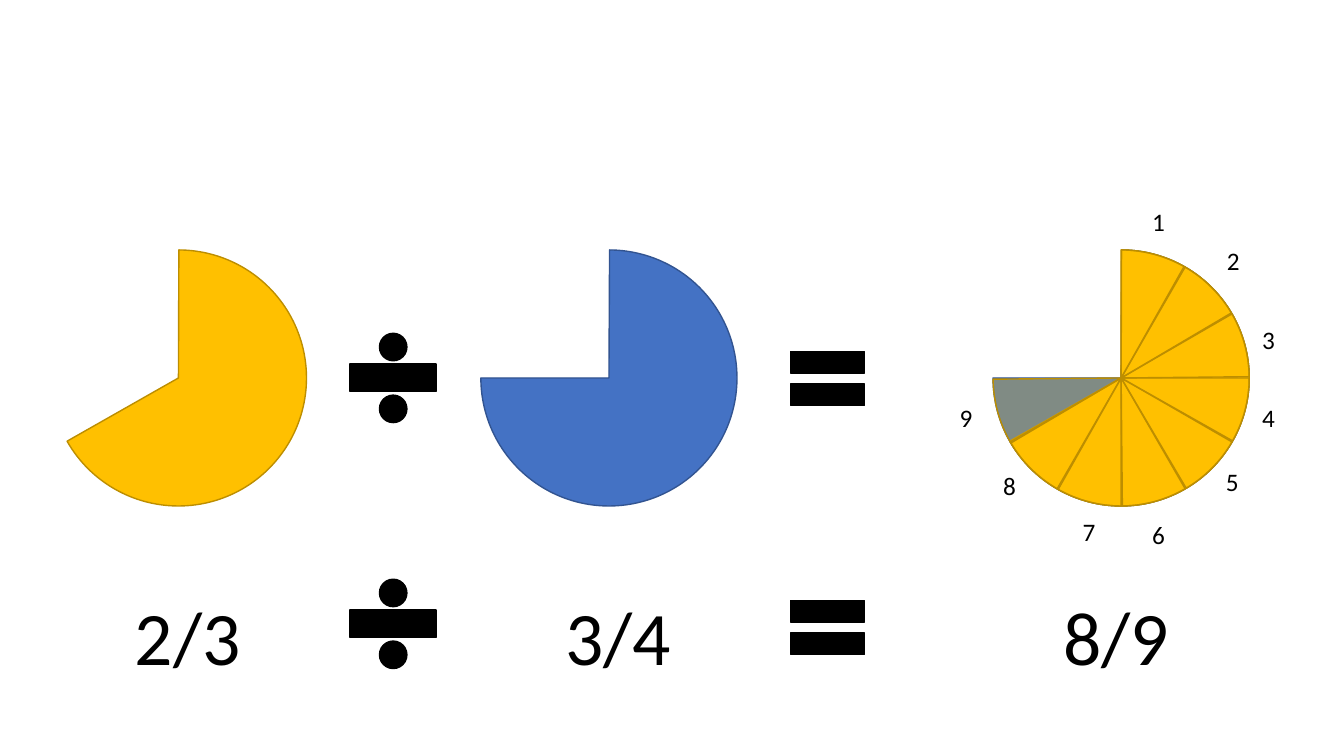
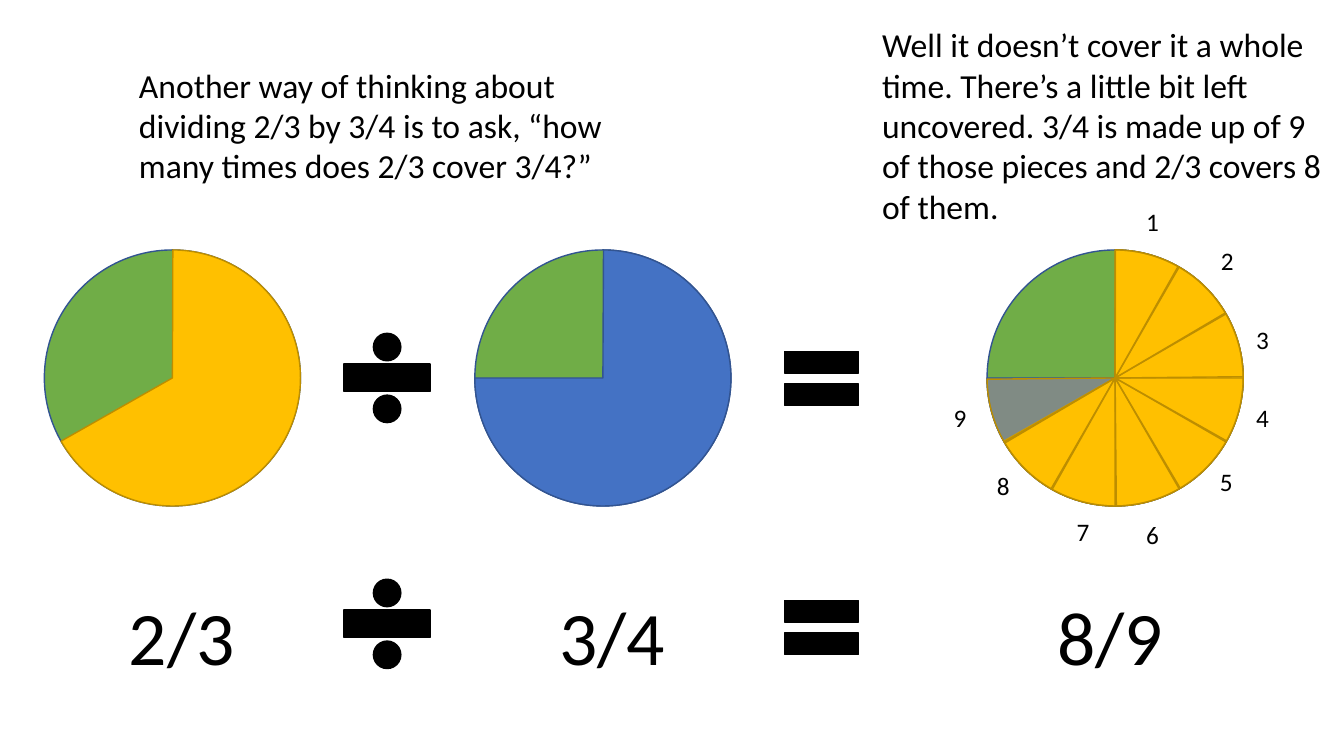
from lxml.etree import SubElement
from pptx import Presentation
from pptx.dml.color import RGBColor
from pptx.enum.shapes import MSO_SHAPE as Kind
from pptx.enum.text import MSO_AUTO_SIZE as Fit
from pptx.oxml.ns import qn
from pptx.util import Inches, Pt

BLACK = RGBColor(0x00, 0x00, 0x00)
BLUE = RGBColor(0x44, 0x72, 0xC4)
NAVY = RGBColor(0x32, 0x54, 0x91)
GOLD = RGBColor(0xFF, 0xC0, 0x00)
OCHRE = RGBColor(0xBD, 0x8E, 0x00)
GREEN = RGBColor(0x70, 0xAD, 0x47)

FONT = "Calibri"
SIZE = 2.54
TOP = 2.48
FIRST, SECOND, THIRD = 0.5, 4.77, 9.85
STEP = 30
LABELS = [(11.33, 2), (12.07, 2.38), (12.42, 3.17), (12.42, 3.94), (12.06, 4.58),
          (11.33, 5.1), (10.64, 5.07), (9.85, 4.62), (9.42, 3.94)]
ASK = ("Another way of thinking about dividing 2/3 by 3/4 is to ask, "
       "“how many times does 2/3 cover 3/4?”")
REPLY = ("Well it doesn’t cover it a whole time. There’s a little bit left uncovered. "
         "3/4 is made up of 9 of those pieces and 2/3 covers 8 of them.")


class Deck:
    """Hold the shared style and the current slide."""

    def __init__(self):
        self.file = Presentation()
        self.file.slide_width = Inches(13.33)
        self.file.slide_height = Inches(7.5)

    def start(self, shift=0):
        self.slide = self.file.slides.add_slide(self.file.slide_layouts[6])
        self.shapes = self.slide.shapes
        self.shift = shift

    def group(self):
        self.shapes = self.slide.shapes.add_group_shape().shapes

    def ungroup(self):
        self.shapes = self.slide.shapes

    def shape(self, kind, x, y, w, h, fill, line):
        item = self.shapes.add_shape(
            kind, Inches(x + self.shift), Inches(y), Inches(w), Inches(h))
        item.shadow.inherit = False
        item.fill.solid()
        item.fill.fore_color.rgb = fill
        item.line.color.rgb = line
        item.line.width = Pt(1)
        return item

    def disc(self, x):
        self.shape(Kind.OVAL, x, TOP, SIZE, SIZE, GREEN, NAVY)

    def pie(self, x, fill, line, begin, end, alpha=None):
        item = self.shape(Kind.PIE, x, TOP, SIZE, SIZE, fill, line)
        item.adjustments[0] = begin * 0.6
        item.adjustments[1] = end * 0.6
        if alpha:
            tone = item.fill._xPr.find(qn("a:solidFill"))[0]
            SubElement(tone, qn("a:alpha")).set("val", str(alpha * 1000))

    def three_fourths(self, x):
        self.pie(x, BLUE, NAVY, 270.28, 180)

    def two_thirds(self, x):
        self.pie(x, GOLD, OCHRE, 270.2, 150.4)

    def text(self, words, x, y, w, h, size, wrap=False):
        box = self.shapes.add_textbox(
            Inches(x + self.shift), Inches(y), Inches(w), Inches(h))
        frame = box.text_frame
        frame.word_wrap = wrap
        frame.auto_size = Fit.SHAPE_TO_FIT_TEXT
        run = frame.paragraphs[0].add_run()
        run.text = words
        run.font.name = FONT
        run.font.size = Pt(size)
        run.font.color.rgb = BLACK

    def signs(self, divide, equal):
        self.shape(Kind.MATH_DIVIDE, 3.32, divide, 1.16, 1.16, BLACK, BLACK)
        self.shape(Kind.MATH_EQUAL, 7.71, equal, 1, 0.91, BLACK, BLACK)

    def answer(self):
        self.group()
        self.three_fourths(THIRD)
        self.two_thirds(THIRD)
        for part in reversed(range(len(LABELS))):
            begin = (270 + part * STEP) % 360
            self.pie(THIRD, GOLD, OCHRE, begin, begin + 29.45, 32)
        for num, (x, y) in enumerate(LABELS, 1):
            self.text(str(num), x, y, 0.33, 0.4, 18)
        self.ungroup()

    def sum(self):
        self.three_fourths(SECOND)
        self.two_thirds(FIRST)
        self.signs(3.17, 3.3)
        self.answer()
        for words, x in (("2/3", 1.24), ("3/4", 5.51), ("8/9", 10.45)):
            self.text(words, x, 5.8, 1.26, 1.01, 54)
        self.signs(5.61, 5.77)


def main():
    deck = Deck()
    deck.start()
    deck.sum()

    deck.start(-0.06)
    for x in (THIRD, FIRST, SECOND):
        deck.disc(x)
    deck.sum()
    deck.text(ASK, 1.34, 0.59, 5.25, 1.31, 24, True)
    deck.text(REPLY, 8.71, 0.19, 4.57, 2.12, 24, True)
    deck.file.save("out.pptx")


if __name__ == "__main__":
    main()
